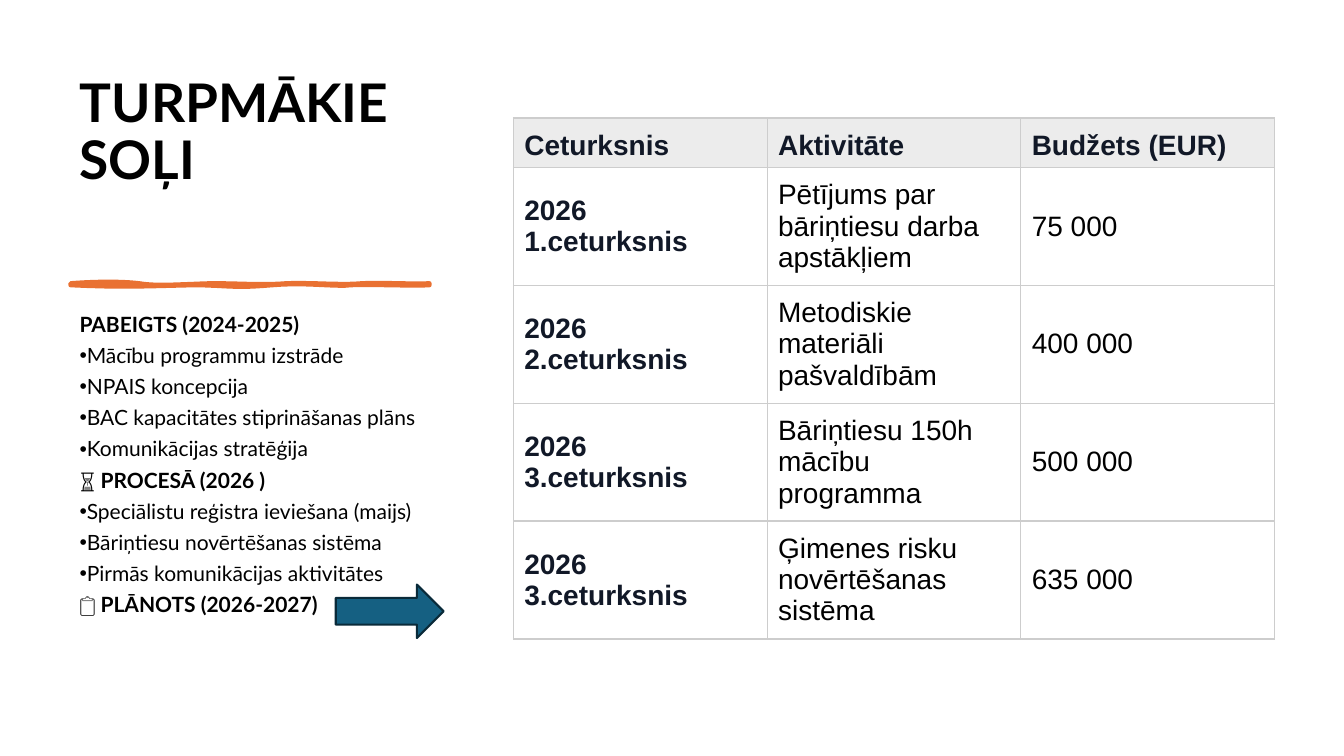
from lxml.etree import SubElement as Sub
from pptx import Presentation
from pptx.dml.color import RGBColor
from pptx.enum.shapes import MSO_SHAPE as Shape
from pptx.enum.text import MSO_ANCHOR as Anchor, PP_ALIGN as Align
from pptx.oxml.ns import qn
from pptx.util import Inches, Pt

COLORS = {
    "text": "000000", "dark": "111827", "head": "ECECEC", "grid": "CDCDCD",
    "wave": "E97132", "arrow": "156082", "edge": "092A39",
}
TITLE = "TURPMĀKIE SOĻI"
STAGES = [
    ("PABEIGTS (2024-2025)", [
        "Mācību programmu izstrāde",
        "NPAIS koncepcija",
        "BAC kapacitātes stiprināšanas plāns",
        "Komunikācijas stratēģija",
    ]),
    ("⏳ PROCESĀ (2026 )", [
        "Speciālistu reģistra ieviešana (maijs)",
        "Bāriņtiesu novērtēšanas sistēma",
        "Pirmās komunikācijas aktivitātes",
    ]),
    ("📋 PLĀNOTS (2026-2027)", []),
]
ROWS = [
    ("Ceturksnis", "Aktivitāte", "Budžets (EUR)"),
    ("2026 1.ceturksnis", "Pētījums par bāriņtiesu darba apstākļiem", "75 000"),
    ("2026 2.ceturksnis", "Metodiskie materiāli pašvaldībām", "400 000"),
    ("2026 3.ceturksnis", "Bāriņtiesu 150h mācību programma", "500 000"),
    ("2026 3.ceturksnis", "Ģimenes risku novērtēšanas sistēma", "635 000"),
]
# Bezier points of the rule: start, then two handles and an end per curve
WAVE = [
    (0.7, 2.81), (0.97, 2.79), (1.21, 2.79), (1.38, 2.81),
    (1.55, 2.84), (1.77, 2.82), (2.09, 2.81),
    (2.41, 2.81), (2.6, 2.83), (2.84, 2.81),
    (3.08, 2.8), (3.39, 2.83), (3.59, 2.81),
    (3.79, 2.8), (4.12, 2.82), (4.26, 2.81),
    (4.26, 2.82), (4.26, 2.83), (4.26, 2.83),
    (4.08, 2.84), (3.64, 2.82), (3.48, 2.83),
    (3.32, 2.85), (3.04, 2.8), (2.7, 2.83),
    (2.35, 2.86), (2.31, 2.84), (1.99, 2.83),
    (1.66, 2.83), (1.32, 2.86), (0.7, 2.83),
]
STEPS = 10


def color(name):
    return RGBColor.from_string(COLORS[name])


def style(para, face, size, bold, name="text"):
    font = para.font
    font.name, font.size, font.bold = face, Pt(size), bold
    font.color.rgb = color(name)


def paint(shape, fill, edge, width):
    shape.shadow.inherit = False
    shape.fill.solid()
    shape.fill.fore_color.rgb = color(fill)
    shape.line.color.rgb = color(edge)
    shape.line.width = Pt(width)


def trace(points):
    """Sample the chain of cubic curves as points in EMU."""
    for i in range(0, len(points) - 1, 3):
        curve = points[i:i + 4]
        for step in range(1, STEPS + 1):
            t = step / STEPS
            parts = ((1 - t) ** 3, 3 * t * (1 - t) ** 2, 3 * t * t * (1 - t), t ** 3)
            yield tuple(Inches(sum(w * p[k] for w, p in zip(parts, curve)))
                        for k in (0, 1))


def add_title(slide):
    title = slide.shapes.title
    title.left, title.top = Inches(0.69), Inches(0.7)
    title.width, title.height = Inches(3.75), Inches(1.88)
    frame = title.text_frame
    frame.word_wrap = True
    frame.vertical_anchor = Anchor.BOTTOM
    frame.margin_bottom = Inches(0.68)
    para = frame.paragraphs[0]
    para.text = TITLE
    para.alignment = Align.LEFT
    para.line_spacing = 0.9
    style(para, "Lato", 38, True)


def add_wave(slide):
    x, y = WAVE[0]
    pen = slide.shapes.build_freeform(Inches(x), Inches(y))
    pen.add_line_segments(list(trace(WAVE)), close=True)
    wave = pen.convert_to_shape()
    paint(wave, "wave", "wave", 3)
    Sub(wave.line._get_or_add_ln(), qn("a:round"))


def add_stages(slide):
    box = slide.shapes.add_textbox(Inches(0.69), Inches(3.07), Inches(3.75), Inches(3.73))
    frame = box.text_frame
    frame.word_wrap = True
    lines = [(text, text == head) for head, items in STAGES for text in (head, *items)]
    for i, (text, bold) in enumerate(lines):
        para = frame.add_paragraph() if i else frame.paragraphs[0]
        para.text = text
        para.line_spacing, para.space_after = 0.9, Pt(6)
        style(para, "Lato", 15, bold)
        if not bold:
            props = para._p.get_or_add_pPr()
            props.set("marL", "0")
            props.set("indent", str(-Inches(0.25)))
            Sub(props, qn("a:buFont"), typeface="Arial")
            Sub(props, qn("a:buChar"), char="•")
            # bullet elements come before the default run properties
            props.append(props.find(qn("a:defRPr")))


def add_borders(cell):
    props = cell._tc.get_or_add_tcPr()
    for side, width in (("L", 0.6), ("R", 0.6), ("T", 1), ("B", 1)):
        line = Sub(props, qn(f"a:ln{side}"), w=str(Pt(width)))
        Sub(Sub(line, qn("a:solidFill")), qn("a:srgbClr"), val=COLORS["grid"])


def add_plan(slide):
    frame = slide.shapes.add_table(len(ROWS), len(ROWS[0]), Inches(5.09), Inches(1.17),
                                   Inches(7.55), Inches(5.17))
    table = frame.table
    table.horz_banding = False
    for r, row in enumerate(ROWS):
        table.rows[r].height = Inches(1.17 if r else 0.49)
        for c, text in enumerate(row):
            cell = table.cell(r, c)
            cell.text = text
            cell.vertical_anchor = Anchor.MIDDLE if r else Anchor.BOTTOM
            cell.margin_left = cell.margin_right = Inches(0.11)
            cell.margin_top = cell.margin_bottom = Inches(0.06)
            bold = r == 0 or c == 0
            style(cell.text_frame.paragraphs[0], "Arial", 20, bold,
                  "dark" if bold else "text")
            add_borders(cell)
            if r:
                cell.fill.background()
            else:
                cell.fill.solid()
                cell.fill.fore_color.rgb = color("head")


def main():
    deck = Presentation()
    deck.slide_width, deck.slide_height = Inches(13.33), Inches(7.5)
    slide = deck.slides.add_slide(deck.slide_layouts[5])
    add_title(slide)
    add_wave(slide)
    add_stages(slide)
    add_plan(slide)
    arrow = slide.shapes.add_shape(Shape.RIGHT_ARROW, Inches(3.33), Inches(5.8),
                                   Inches(1.07), Inches(0.53))
    paint(arrow, "arrow", "edge", 1.5)
    deck.save("out.pptx")


if __name__ == "__main__":
    main()
